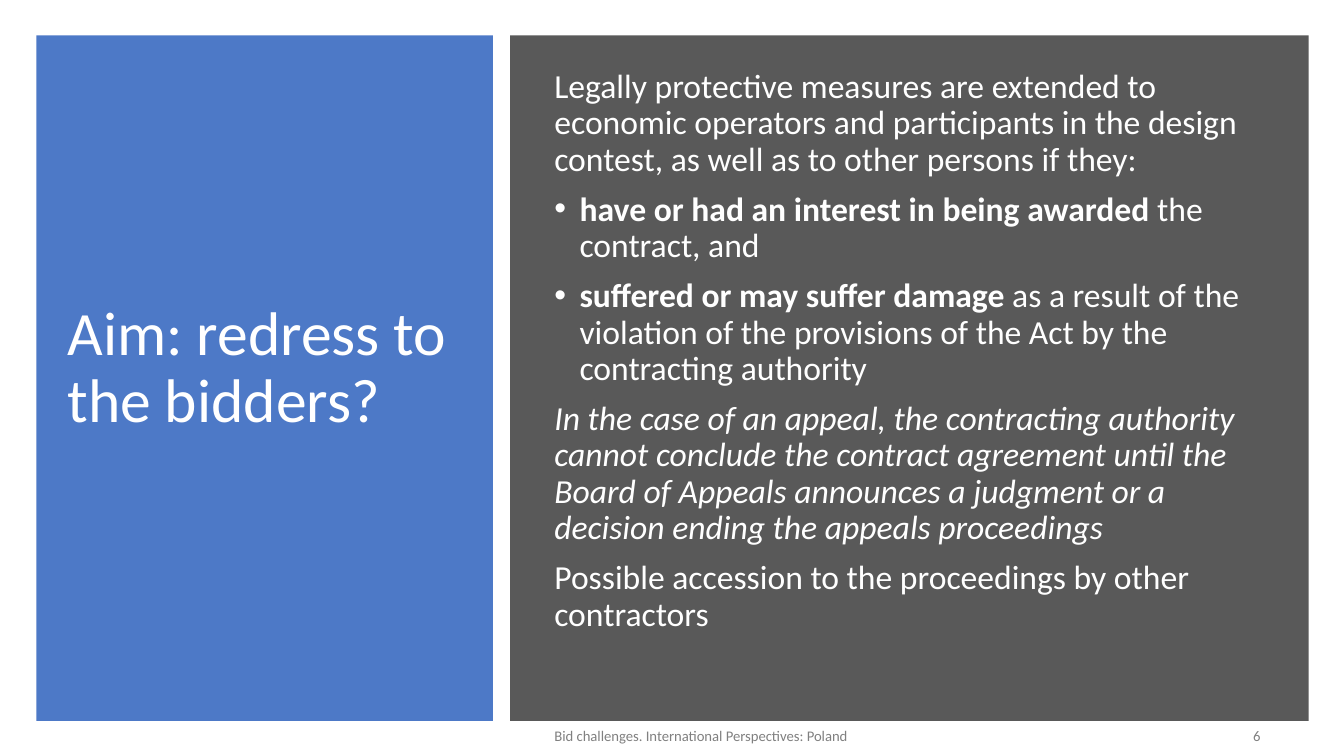
from dataclasses import dataclass

from lxml import etree
from pptx import Presentation
from pptx import util as u
from pptx.dml.color import RGBColor
from pptx.enum import shapes, text
from pptx.oxml.ns import qn

WIDTH, HEIGHT = u.Inches(13.33), u.Inches(7.5)


@dataclass(frozen=True)
class Theme:
    font: str = "Calibri"
    blue: str = "4472C4"
    dark: str = "595959"
    light: str = "FFFFFF"
    muted: str = "808080"
    title: float = 44
    body: float = 24
    footer: float = 10.5


@dataclass(frozen=True)
class Box:
    """A rectangle in percent of the slide's width and height."""
    left: float
    top: float
    width: float
    height: float

    def emu(self) -> tuple[int, int, int, int]:
        return (int(WIDTH * self.left / 100), int(HEIGHT * self.top / 100),
                int(WIDTH * self.width / 100), int(HEIGHT * self.height / 100))


@dataclass(frozen=True)
class Panel:
    box: Box
    color: str
    opacity: int = 100


@dataclass(frozen=True)
class Run:
    text: str
    bold: bool = False
    italic: bool = False


@dataclass(frozen=True)
class Para:
    runs: tuple[Run, ...]
    bullet: bool = False


@dataclass(frozen=True)
class TextBlock:
    box: Box
    paras: tuple[Para, ...]
    size: float
    color: str
    anchor: text.MSO_ANCHOR = text.MSO_ANCHOR.MIDDLE
    align: text.PP_ALIGN = text.PP_ALIGN.LEFT
    line_spacing: float = 0.9
    space_before: float = 10


T = Theme()
PANEL_TOP, PANEL_HEIGHT = 4.67, 90.67
TEXT_TOP, TEXT_HEIGHT = 8.53, 80.53
FOOTER_TOP, FOOTER_HEIGHT = 95.33, 4
BODY_LEFT = 40.51

PANELS = (
    Panel(Box(2.7, PANEL_TOP, 33.98, PANEL_HEIGHT), T.blue, 95),
    Panel(Box(37.96, PANEL_TOP, 59.41, PANEL_HEIGHT), T.dark),
)

BODY = (
    Para((Run("Legally protective measures are extended to economic operators and "
              "participants in the design contest, as well as to other persons if they:"),)),
    Para((Run("have or had an interest in being awarded ", bold=True),
          Run("the contract, and")), bullet=True),
    Para((Run("suffered or may suffer damage ", bold=True),
          Run("as a result of the violation of the provisions of the Act by the "
              "contracting authority")), bullet=True),
    Para((Run("In the case of an appeal, the contracting authority cannot conclude the "
              "contract agreement until the Board of Appeals announces a judgment or a "
              "decision ending the appeals proceedings", italic=True),)),
    Para((Run("Possible accession to the proceedings by other contractors"),)),
)

TEXTS = (
    TextBlock(Box(4.28, TEXT_TOP, 30.53, TEXT_HEIGHT),
              (Para((Run("Aim: redress to the bidders?"),)),), T.title, T.light),
    TextBlock(Box(BODY_LEFT, TEXT_TOP, 54.09, TEXT_HEIGHT), BODY, T.body, T.light,
              anchor=text.MSO_ANCHOR.TOP),
    TextBlock(Box(BODY_LEFT, FOOTER_TOP, 43.89, FOOTER_HEIGHT),
              (Para((Run("Bid challenges. International Perspectives: Poland"),)),),
              T.footer, T.muted, line_spacing=1),
    TextBlock(Box(86.57, FOOTER_TOP, 7.95, FOOTER_HEIGHT), (Para((Run("6"),)),),
              T.footer, T.muted, align=text.PP_ALIGN.RIGHT, line_spacing=1),
)


def set_attrs(target, values: dict) -> None:
    for name, value in values.items():
        setattr(target, name, value)


def draw_panel(s, panel: Panel) -> None:
    sp = s.shapes.add_shape(shapes.MSO_SHAPE.RECTANGLE, *panel.box.emu())
    sp.shadow.inherit = False
    sp.line.fill.background()
    sp.fill.solid()
    sp.fill.fore_color.rgb = RGBColor.from_string(panel.color)
    if panel.opacity < 100:
        color = sp.fill._xPr.find(f".//{qn('a:srgbClr')}")
        etree.SubElement(color, qn("a:alpha"), val=str(panel.opacity * 1000))


def add_bullet(p) -> None:
    """Give the paragraph a round bullet with a quarter-inch hanging indent."""
    pPr = p._p.get_or_add_pPr()
    indent = u.Inches(0.25)
    pPr.set("marL", str(indent))
    pPr.set("indent", str(-indent))
    etree.SubElement(pPr, qn("a:buFont"), typeface="Arial")
    etree.SubElement(pPr, qn("a:buChar"), char="•")


def draw_text(s, block: TextBlock) -> None:
    tf = s.shapes.add_textbox(*block.box.emu()).text_frame
    set_attrs(tf, {"word_wrap": True, "vertical_anchor": block.anchor})
    for i, para in enumerate(block.paras):
        p = tf.add_paragraph() if i else tf.paragraphs[0]
        if para.bullet:
            add_bullet(p)
        set_attrs(p, {"alignment": block.align, "line_spacing": block.line_spacing,
                      "space_before": u.Pt(block.space_before if i else 0)})
        for run in para.runs:
            r = p.add_run()
            r.text = run.text
            set_attrs(r.font, {"name": T.font, "size": u.Pt(block.size),
                               "bold": run.bold, "italic": run.italic})
            r.font.color.rgb = RGBColor.from_string(block.color)


def main() -> None:
    prs = Presentation()
    set_attrs(prs, {"slide_width": WIDTH, "slide_height": HEIGHT})
    s = prs.slides.add_slide(prs.slide_layouts[6])
    for panel in PANELS:
        draw_panel(s, panel)
    for block in TEXTS:
        draw_text(s, block)
    prs.save("out.pptx")


if __name__ == "__main__":
    main()
